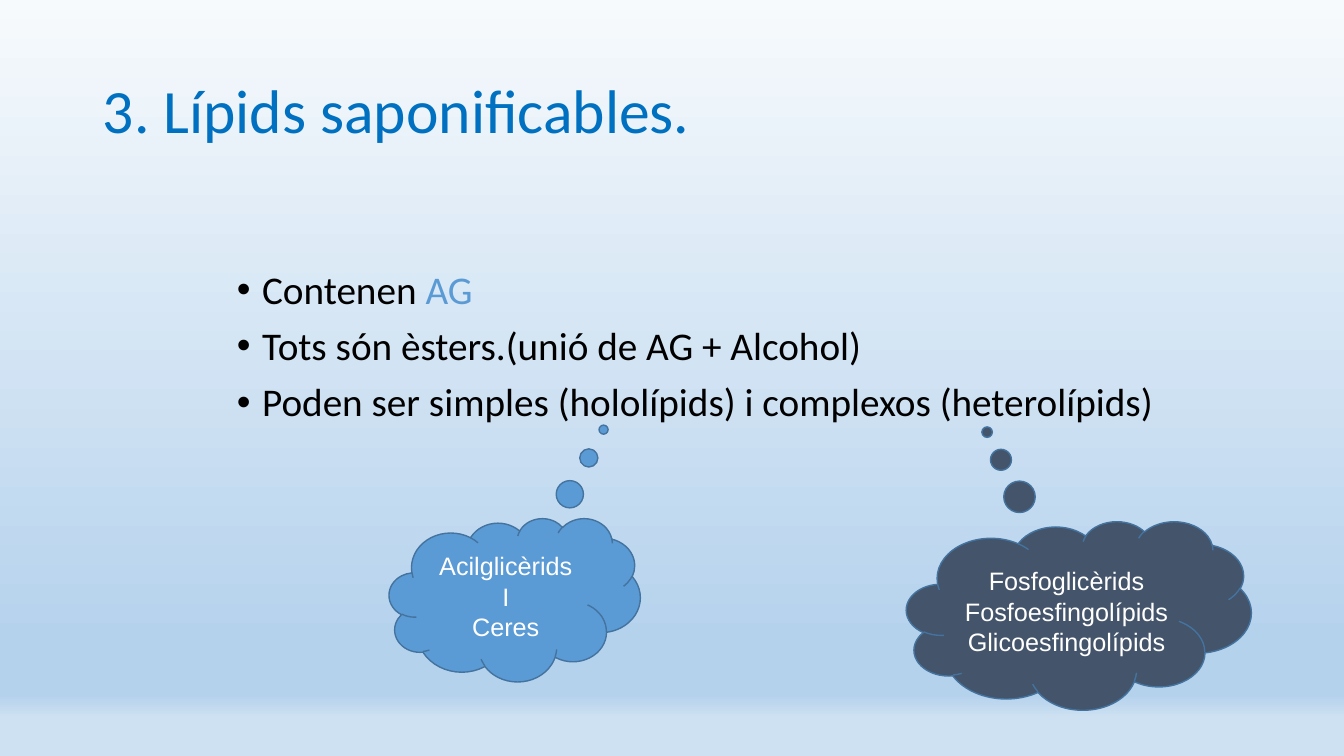
import lxml.etree
import pptx
import pptx.dml.color
import pptx.enum.shapes
import pptx.enum.text
import pptx.oxml.ns
import pptx.util

Inches, Pt = pptx.util.Inches, pptx.util.Pt
RGB = pptx.dml.color.RGBColor.from_string
ALIGN, ANCHOR = pptx.enum.text.PP_ALIGN, pptx.enum.text.MSO_ANCHOR
qn = pptx.oxml.ns.qn

COLORS = {
    "title": "0070C0", "body": "000000", "accent": "5B9BD5",
    "complex": "44546A", "outline": "43739E", "cloud_text": "FFFFFF",
    "sky": "F7FAFD", "horizon": "B5D2EC", "ground": "CEE1F2",
}
SKY_STOPS = [(0, "sky"), (85, "horizon"), (92, "horizon"), (95, "ground")]

deck = pptx.Presentation()
deck.slide_width, deck.slide_height = Inches(13.33), Inches(7.5)
slide = deck.slides.add_slide(deck.slide_layouts[1])


def write(shape, paragraphs, size, font, color, align=ALIGN.LEFT,
          anchor=ANCHOR.MIDDLE, line_spacing=1.0, space_before=0, bullet_indent=0):
    """Fill a shape; each paragraph is a list of (text, colour or None for the default)."""
    frame = shape.text_frame
    frame.word_wrap = True
    frame.auto_size = pptx.enum.text.MSO_AUTO_SIZE.NONE
    frame.vertical_anchor = anchor
    for index, pieces in enumerate(paragraphs):
        paragraph = frame.add_paragraph() if index else frame.paragraphs[0]
        paragraph.alignment = align
        paragraph.line_spacing = line_spacing
        paragraph.space_before = Pt(space_before)
        if bullet_indent:
            properties = paragraph._p.get_or_add_pPr()
            properties.set("marL", str(Inches(bullet_indent)))
            properties.set("indent", str(-Inches(bullet_indent)))
            lxml.etree.SubElement(properties, qn("a:buFont"), typeface="Arial")
            lxml.etree.SubElement(properties, qn("a:buChar"), char="•")
        for text, own_color in pieces:
            run = paragraph.add_run()
            run.text = text
            run.font.size, run.font.name = Pt(size), font
            run.font.color.rgb = RGB(COLORS[own_color or color])


def place(shape, left, top, width, height):
    shape.left, shape.top = Inches(left), Inches(top)
    shape.width, shape.height = Inches(width), Inches(height)


# Background
sky = slide.background.fill
sky.gradient()
sky.gradient_angle = 270
stops = slide.element.find(".//" + qn("a:gsLst"))
stops.clear()
for percent, name in SKY_STOPS:
    stop = lxml.etree.SubElement(stops, qn("a:gs"), pos=str(percent * 1000))
    lxml.etree.SubElement(stop, qn("a:srgbClr"), val=COLORS[name])

# Title and list
title, facts = slide.placeholders
place(title, 0.92, 0.4, 11.5, 1.45)
write(title, [[("3. Lípids saponificables.", None)]], 44, "Calibri", "title",
      line_spacing=0.9)

place(facts, 2.25, 2.63, 10.16, 4.12)
write(facts, [
    [("Contenen ", None), ("AG", "accent")],
    [("Tots són èsters.(unió de AG + Alcohol)", None)],
    [("Poden ser simples (hololípids) i complexos (heterolípids)", None)],
], 28, "Calibri", "body", anchor=ANCHOR.TOP, line_spacing=0.9,
    space_before=10, bullet_indent=0.25)

# Thought clouds: box, pointer, fill, lines
clouds = [
    ((3.86, 5.14, 2.49, 1.62), (0.354, -1.042), "accent",
     ["Acilglicèrids", "I", "Ceres"]),
    ((8.99, 5.17, 3.42, 1.87), (-0.266, -0.972), "complex",
     ["Fosfoglicèrids", "Fosfoesfingolípids", "Glicoesfingolípids"]),
]
for box, pointer, fill, examples in clouds:
    cloud = slide.shapes.add_shape(
        pptx.enum.shapes.MSO_SHAPE.CLOUD_CALLOUT, *map(Inches, box))
    cloud.adjustments[0], cloud.adjustments[1] = pointer
    cloud.shadow.inherit = False
    cloud.fill.solid()
    cloud.fill.fore_color.rgb = RGB(COLORS[fill])
    cloud.line.color.rgb = RGB(COLORS["outline"])
    cloud.line.width = Pt(1)
    write(cloud, [[(example, None)] for example in examples], 18, "Arial",
          "cloud_text", align=ALIGN.CENTER)

deck.save("out.pptx")
